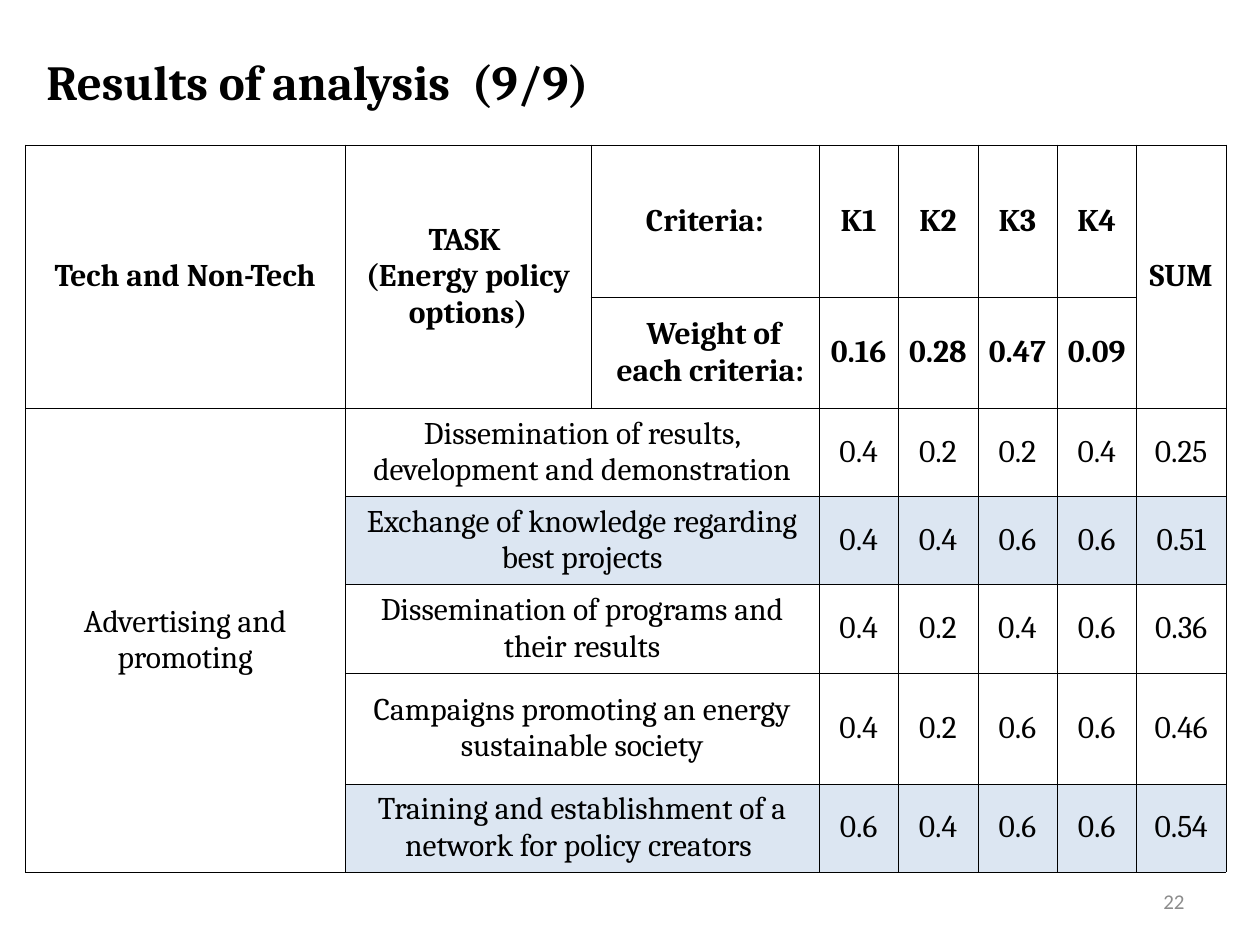
from dataclasses import dataclass

from lxml import etree
from pptx import Presentation
from pptx.dml.color import RGBColor
from pptx.enum.text import MSO_ANCHOR, PP_ALIGN
from pptx.oxml.ns import qn
from pptx.util import Inches, Pt

LEFT, CENTER, RIGHT = PP_ALIGN.LEFT, PP_ALIGN.CENTER, PP_ALIGN.RIGHT
TOP, MIDDLE = MSO_ANCHOR.TOP, MSO_ANCHOR.MIDDLE


@dataclass(frozen=True)
class Theme:
    ink: str = "000000"
    muted: str = "8C8C8C"
    highlight: str = "DCE6F2"
    font: str = "Cambria"
    number_font: str = "Calibri"
    title_size: int = 28
    table_size: int = 18
    number_size: int = 12
    border_width: float = 0.25


THEME = Theme()

COLUMN_WIDTHS = [2.54, 1.95, 1.81] + [0.63] * 4 + [0.71]
ROW_HEIGHTS = [1.21, 0.88, 0.7, 0.7, 0.7, 0.88, 0.7]
SUM_COLUMN = len(COLUMN_WIDTHS) - 1
FIRST_CRITERION = 3
HEADER_ROWS = 2

CRITERIA = [("K1", "0.16"), ("K2", "0.28"), ("K3", "0.47"), ("K4", "0.09")]
# Task, scores for K1 to K4 and their sum, highlighted or not
TASKS = [
    ("Dissemination of results, development and demonstration",
     ["0.4", "0.2", "0.2", "0.4", "0.25"], False),
    ("Exchange of knowledge regarding best projects",
     ["0.4", "0.4", "0.6", "0.6", "0.51"], True),
    ("Dissemination of programs and their results",
     ["0.4", "0.2", "0.4", "0.6", "0.36"], False),
    ("Campaigns promoting an energy sustainable society",
     ["0.4", "0.2", "0.6", "0.6", "0.46"], False),
    ("Training and establishment of a network for policy creators ",
     ["0.6", "0.4", "0.6", "0.6", "0.54"], True),
]


def write_text(frame, text, *, size=THEME.table_size, font=THEME.font,
               color=THEME.ink, bold=False, align=CENTER, indent=0):
    """Fill a text frame, one paragraph for each line of text."""
    for number, line in enumerate(text.split("\n")):
        paragraph = frame.add_paragraph() if number else frame.paragraphs[0]
        paragraph.alignment = align
        if indent:
            properties = paragraph._p.get_or_add_pPr()
            properties.set("marL", str(Inches(indent)))
            properties.set("indent", "0")
        run = paragraph.add_run()
        run.text = line
        run.font.size = Pt(size)
        run.font.name = font
        run.font.bold = bold
        run.font.color.rgb = RGBColor.from_string(color)


def add_text_box(slide, box, text, *, anchor=TOP, wrap=True, **text_format):
    frame = slide.shapes.add_textbox(*map(Inches, box)).text_frame
    frame.word_wrap = wrap
    frame.vertical_anchor = anchor
    write_text(frame, text, **text_format)


def set_borders(cell):
    properties = cell._tc.get_or_add_tcPr()
    for position, side in enumerate(("lnL", "lnR", "lnT", "lnB")):
        line = etree.Element(qn(f"a:{side}"), w=str(Pt(THEME.border_width)))
        fill = etree.SubElement(line, qn("a:solidFill"))
        etree.SubElement(fill, qn("a:srgbClr"), val=THEME.ink)
        properties.insert(position, line)


def style_cell(cell, highlighted):
    cell.vertical_anchor = MIDDLE
    cell.margin_left = cell.margin_right = Inches(0.02)
    cell.margin_top = cell.margin_bottom = 0
    if highlighted:
        cell.fill.solid()
        cell.fill.fore_color.rgb = RGBColor.from_string(THEME.highlight)
    else:
        cell.fill.background()
    set_borders(cell)


def add_grid(slide, left, top):
    """Add the empty table with its sizes, fills, borders and merged cells."""
    grid = slide.shapes.add_table(
        len(ROW_HEIGHTS), len(COLUMN_WIDTHS), Inches(left), Inches(top),
        Inches(sum(COLUMN_WIDTHS)), Inches(sum(ROW_HEIGHTS))).table
    grid.first_row = grid.horz_banding = False
    for column, width in zip(grid.columns, COLUMN_WIDTHS):
        column.width = Inches(width)
    for row, height in zip(grid.rows, ROW_HEIGHTS):
        row.height = Inches(height)

    for r in range(len(ROW_HEIGHTS)):
        highlighted_row = r >= HEADER_ROWS and TASKS[r - HEADER_ROWS][2]
        for c in range(len(COLUMN_WIDTHS)):
            style_cell(grid.cell(r, c), highlighted_row and c > 0)

    for c in (0, 1, SUM_COLUMN):
        grid.cell(0, c).merge(grid.cell(HEADER_ROWS - 1, c))
    grid.cell(HEADER_ROWS, 0).merge(grid.cell(len(ROW_HEIGHTS) - 1, 0))
    for r in range(HEADER_ROWS, len(ROW_HEIGHTS)):
        grid.cell(r, 1).merge(grid.cell(r, 2))
    return grid


def fill_header(grid):
    headings = {
        (0, 0): "Tech and Non-Tech",
        (0, 1): "TASK \n(Energy policy options)",
        (0, 2): "Criteria:",
        (0, SUM_COLUMN): "SUM",
    }
    for c, (name, weight) in enumerate(CRITERIA, FIRST_CRITERION):
        headings[0, c] = name
        headings[1, c] = weight
    for place, heading in headings.items():
        write_text(grid.cell(*place).text_frame, heading, bold=True)
    write_text(grid.cell(1, 2).text_frame, "Weight of each criteria: ",
               bold=True, indent=0.14)


def fill_tasks(grid):
    write_text(grid.cell(HEADER_ROWS, 0).text_frame,
               "Advertising and promoting")
    for r, (task, scores, _) in enumerate(TASKS, HEADER_ROWS):
        write_text(grid.cell(r, 1).text_frame, task)
        for c, score in enumerate(scores, FIRST_CRITERION):
            write_text(grid.cell(r, c).text_frame, score)


def main():
    deck = Presentation()
    deck.slide_width, deck.slide_height = Inches(10), Inches(7.5)
    slide = deck.slides.add_slide(deck.slide_layouts[6])

    grid = add_grid(slide, 0.2, 1.15)
    fill_header(grid)
    fill_tasks(grid)
    add_text_box(slide, (7.17, 6.95, 2.33, 0.4), "22", anchor=MIDDLE,
                 size=THEME.number_size, font=THEME.number_font,
                 color=THEME.muted, align=RIGHT)
    add_text_box(slide, (0.27, 0.36, 4.66, 0.57), "Results of analysis  (9/9)",
                 wrap=False, size=THEME.title_size, bold=True, align=LEFT)

    deck.save("out.pptx")


if __name__ == "__main__":
    main()
